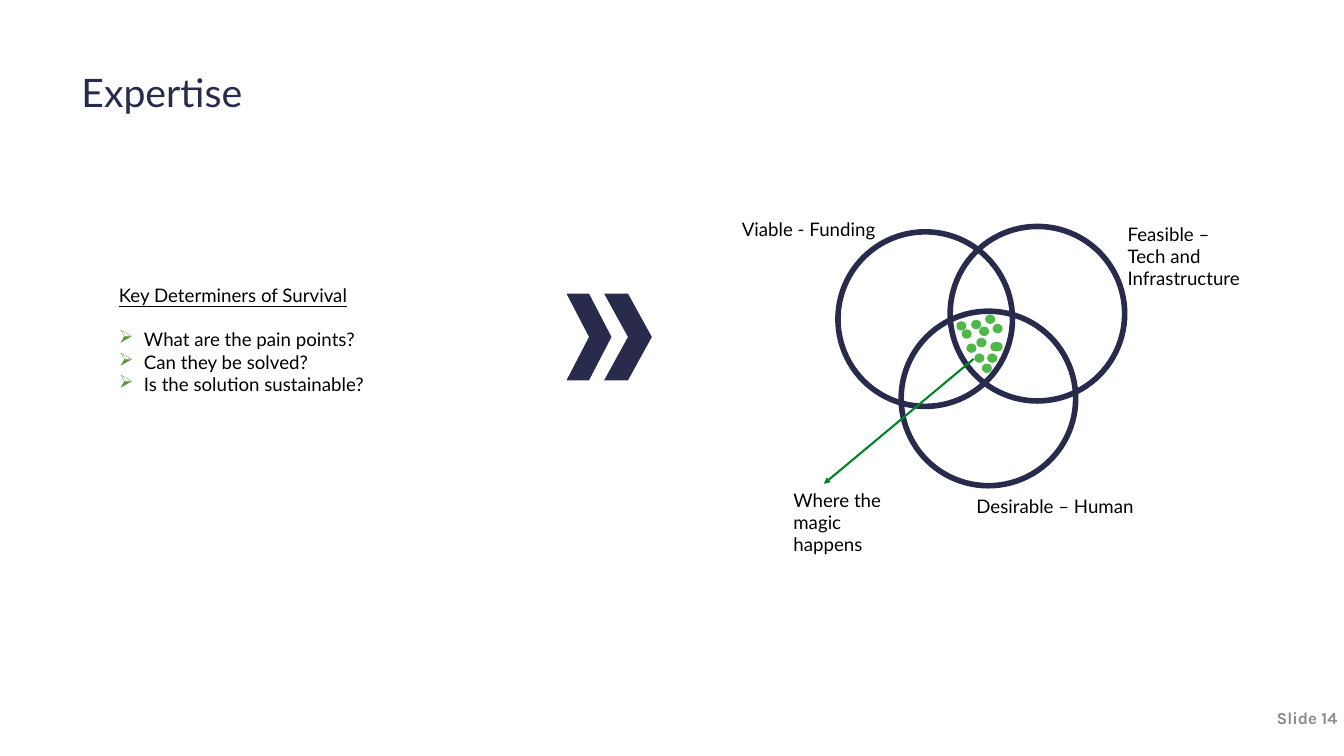
from dataclasses import dataclass

from lxml.etree import SubElement
from pptx import Presentation
from pptx.dml.color import RGBColor
from pptx.enum.shapes import MSO_CONNECTOR, MSO_SHAPE
from pptx.enum.text import MSO_ANCHOR, MSO_AUTO_SIZE, PP_ALIGN
from pptx.oxml.ns import qn
from pptx.util import Pt


@dataclass(frozen=True)
class Theme:
    font: str = "Lato"
    number_font: str = "Karla"
    navy: str = "292B4D"
    title: str = "282B4D"
    black: str = "000000"
    gray: str = "8C8C8C"
    dot: str = "50B848"
    arrow: str = "00842A"
    bullet: str = "60943C"
    title_size: int = 42
    body_size: int = 20
    number_size: int = 18


THEME = Theme()

QUESTIONS = [
    "What are the pain points?",
    "Can they be solved?",
    "Is the solution sustainable?",
]
CHEVRONS = [(647.3, 51.1), (607, 48.2)]  # left, width
CIRCLES = [(1018, 242.6), (965.5, 333.4), (897.8, 248.4)]
DOTS = [
    (1046, 362), (1061, 366.5), (1040.5, 342.7), (1035.4, 368), (1063.5, 347),
    (1030.3, 352.8), (1049, 350), (1057.7, 378.7), (1063.5, 366.5),
    (1044, 378.7), (1052, 389.5), (1055.5, 337), (1024.6, 344.2),
]
LABELS = [
    (["Viable - Funding"], (787.7, 229.7, 175, 31.7)),
    (["Feasible –", "Tech and Infrastructure"], (1201, 234.7, 147.6, 80)),
    (["Desirable – Human"], (1039, 526.3, 213.8, 31.7)),
    (["Where the magic happens"], (843, 519.8, 136.8, 80)),
]


def color(value):
    return RGBColor.from_string(value)


def add_run(para, text, size=THEME.body_size, ink=THEME.black, font=THEME.font):
    span = para.add_run()
    span.text = text
    span.font.name = font
    span.font.size = Pt(size)
    span.font.color.rgb = color(ink)
    return span


def add_box(page, bounds):
    box = page.shapes.add_textbox(*map(Pt, bounds))
    box.text_frame.word_wrap = True
    return box.text_frame


def add_figure(page, kind, bounds, fill=None, line=None, width=0):
    figure = page.shapes.add_shape(kind, *map(Pt, bounds))
    figure.shadow.inherit = False
    if fill:
        figure.fill.solid()
        figure.fill.fore_color.rgb = color(fill)
    else:
        figure.fill.background()
    if line:
        figure.line.color.rgb = color(line)
        figure.line.width = Pt(width)
    else:
        figure.line.fill.background()


def set_bullet(para, mark, ink, indent):
    properties = para._p.get_or_add_pPr()
    properties.set("marL", str(Pt(indent)))
    properties.set("indent", str(-Pt(indent)))
    bullet_color = SubElement(properties, qn("a:buClr"))
    SubElement(bullet_color, qn("a:srgbClr"), val=ink)
    SubElement(properties, qn("a:buChar"), char=mark)


def add_title(page, text):
    title = page.shapes.title
    title.left, title.top, title.width, title.height = map(Pt, (79.2, 63.4, 1082, 70.6))
    frame = title.text_frame
    frame.auto_size = MSO_AUTO_SIZE.NONE
    frame.vertical_anchor = MSO_ANCHOR.MIDDLE
    frame.margin_left = frame.margin_right = Pt(8)
    frame.margin_top = frame.margin_bottom = Pt(4)
    para = frame.paragraphs[0]
    para.alignment = PP_ALIGN.LEFT
    add_run(para, text, THEME.title_size, THEME.title)


def add_questions(page):
    frame = add_box(page, (120.2, 300.2, 367.2, 177))
    add_run(frame.paragraphs[0], "Key Determiners of Survival").font.underline = True
    for index, question in enumerate(QUESTIONS):
        para = frame.add_paragraph()
        set_bullet(para, "➢", THEME.bullet, 27)
        if index == 0:
            para.space_before = Pt(24)
        add_run(para, question)


def add_label(page, lines, bounds):
    para = add_box(page, bounds).paragraphs[0]
    for index, line in enumerate(lines):
        if index:
            para.add_line_break()
        add_run(para, line)


def add_arrow(page, start, end):
    arrow = page.shapes.add_connector(MSO_CONNECTOR.STRAIGHT, *map(Pt, start + end))
    arrow.line.color.rgb = color(THEME.arrow)
    arrow.line.width = Pt(2.25)
    SubElement(arrow.line._get_or_add_ln(), qn("a:tailEnd"), type="triangle")
    SubElement(arrow._element.spPr, qn("a:effectLst"))


def add_venn(page):
    for left, top in CIRCLES:
        add_figure(page, MSO_SHAPE.OVAL, (left, top, 187, 187), line=THEME.navy, width=6)
    add_arrow(page, (1043.3, 384.5), (882.7, 518.4))
    for lines, bounds in LABELS:
        add_label(page, lines, bounds)
    for left, top in DOTS:
        add_figure(page, MSO_SHAPE.OVAL, (left, top, 10.8, 10.1), fill=THEME.dot)


def add_slide_number(page, text):
    frame = add_box(page, (1116, 747.4, 324, 43.2))
    frame.vertical_anchor = MSO_ANCHOR.MIDDLE
    para = frame.paragraphs[0]
    para.alignment = PP_ALIGN.RIGHT
    span = add_run(para, text, THEME.number_size, THEME.gray, THEME.number_font)
    span.font.bold = True


def main():
    deck = Presentation()
    deck.slide_width, deck.slide_height = Pt(1440), Pt(810)
    page = deck.slides.add_slide(deck.slide_layouts.get_by_name("Title Only"))
    add_title(page, "Expertise")
    add_slide_number(page, "Slide 14")
    add_questions(page)
    for left, width in CHEVRONS:
        add_figure(page, MSO_SHAPE.CHEVRON, (left, 314.6, width, 92.9), fill=THEME.navy)
    add_venn(page)
    deck.save("out.pptx")


if __name__ == "__main__":
    main()
